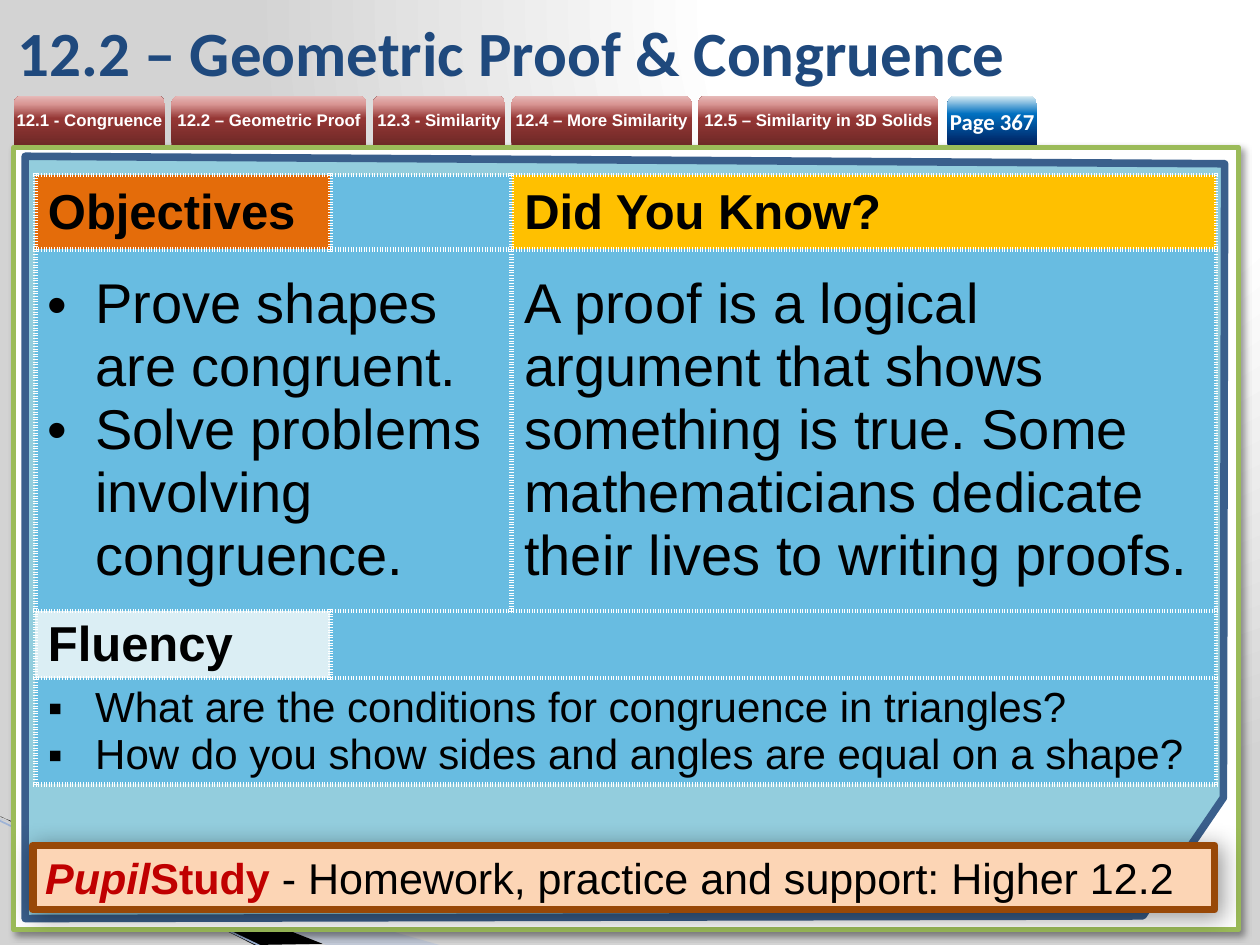
from lxml import etree
from pptx import Presentation
from pptx.dml.color import RGBColor
from pptx.enum import dml, shapes, text
from pptx.oxml.ns import qn
from pptx.util import Pt

THEME = {
    "head": "Calibri", "body": "Arial",
    "navy": "1F497D", "black": "000000", "white": "FFFFFF", "red": "C00000",
    "orange": "E46C0A", "gold": "FFC000", "ice": "DBEEF4", "sky": "68BCE1",
    "teal": "93CDDD", "edge": "3A5F8C", "green": "9BBB59", "peach": "FCD5B5",
    "brown": "984807", "haze": "A7B9DB", "mist": "9EB3D6",
    "title": 36, "big": 32, "label": 28, "small": 24, "foot": 24.6, "tab": 9.6, "page": 13,
    "maroon": [(0, "6F2927"), (54, "953735"), (83, "D99694"), (100, "E6B9B8")],
    "ocean": [(0, "002060"), (63, "0070C0"), (100, "DBEEF4")],
    "glow": [(0, "FFFFFF"), (40, "FFFFFF"), (100, "D3D3D3")],
}
T = THEME

# Content
TITLE = "12.2 – Geometric Proof & Congruence"
TABS = [("12.1 - Congruence", 86.4), ("12.2 – Geometric Proof", 111.6),
        ("12.3 - Similarity", 75.6), ("12.4 – More Similarity", 103),
        ("12.5 – Similarity in 3D Solids", 137.5)]
PAGE = "Page 367"
COLS = [168.5, 103.7, 402.5]
ROWS = [42.5, 206.6, 35.3, 45.4]
LABEL = {"size": T["label"], "bold": True}
# row, column, column span, fill, paragraphs, format
CELLS = [
    (0, 0, 1, "orange", ["Objectives"], LABEL),
    (0, 1, 1, "sky", [], {}),
    (0, 2, 1, "gold", ["Did You Know?"], LABEL),
    (1, 0, 2, "sky", ["Prove shapes are congruent.",
                      "Solve problems involving congruence."],
     {"size": T["big"], "bullet": "•"}),
    (1, 2, 1, "sky", ["A proof is a logical argument that shows something is true. "
                      "Some mathematicians dedicate their lives to writing proofs."],
     {"size": T["big"]}),
    (2, 0, 1, "ice", ["Fluency"], LABEL),
    (2, 1, 2, "sky", [], {}),
    (3, 0, 3, "sky", ["What are the conditions for congruence in triangles?",
                      "How do you show sides and angles are equal on a shape?"],
     {"size": T["small"], "bullet": "▪"}),
]
FOOT = [("Pupil", {"color": "red", "bold": True, "italic": True}),
        ("Study ", {"color": "red", "bold": True}),
        ("- Homework, practice and support: Higher 12.2", {})]


def rgb(name):
    return RGBColor.from_string(T[name])


def sub(node, tag, **attrs):
    return etree.SubElement(node, qn("a:" + tag), {k: str(v) for k, v in attrs.items()})


def write(frame, paras, size=18, font="body", color="black", bold=False, italic=False,
          align="LEFT", bullet=None, lead=None):
    """Each paragraph is a string or a list of (text, format) runs."""
    for i, runs in enumerate(paras):
        para = frame.paragraphs[0] if i == 0 else frame.add_paragraph()
        if bullet:
            props = para._p.get_or_add_pPr()
            props.set("marL", str(Pt(27)))
            props.set("indent", str(Pt(-27)))
            sub(props, "buFont", typeface=T["body"])
            sub(props, "buChar", char=bullet)
        para.alignment = text.PP_ALIGN[align]
        if lead:
            para.line_spacing = Pt(lead)
        for words, own in [(runs, {})] if isinstance(runs, str) else runs:
            run = para.add_run()
            run.text = words
            run.font.name, run.font.size = T[font], Pt(size)
            run.font.bold = own.get("bold", bold)
            run.font.italic = own.get("italic", italic)
            run.font.color.rgb = rgb(own.get("color", color))


def blend(fill, owner, stops, center=None):
    fill.gradient()
    grad = owner.find(".//" + qn("a:gradFill"))
    for child in list(grad):
        grad.remove(child)
    group = sub(grad, "gsLst")
    for pos, color in stops:
        sub(sub(group, "gs", pos=pos * 1000), "srgbClr", val=color)
    if center:
        sub(sub(grad, "path", path="circle"), "fillToRect",
            **{side: v * 1000 for side, v in zip("ltrb", center)})
    else:
        sub(grad, "lin", ang=16200000, scaled=0)


def paint(shape, fill=None, line=None, width=1, shade=None):
    shape.shadow.inherit = False
    if fill:
        shape.fill.solid()
        shape.fill.fore_color.rgb = rgb(fill)
    if line:
        shape.line.color.rgb, shape.line.width = rgb(line), Pt(width)
    else:
        shape.line.fill.background()
    if shade:
        glow = sub(shape.element.spPr.find(qn("a:effectLst")), "outerShdw",
                   blurRad=Pt(shade), dist=Pt(3), dir=45 * 60000, algn="tl", rotWithShape=0)
        sub(sub(glow, "srgbClr", val=T["black"]), "alpha", val=40000)


def box(slide, kind, left, top, width, height):
    return slide.shapes.add_shape(kind, Pt(left), Pt(top), Pt(width), Pt(height))


def outline(slide, points, close=True):
    pts = [(Pt(x), Pt(y)) for x, y in points]
    pen = slide.shapes.build_freeform(*pts[0])
    pen.add_line_segments(pts[1:], close=close)
    return pen.convert_to_shape()


def tab(slide, words, left, width, stops, **fmt):
    shape = box(slide, shapes.MSO_SHAPE.ROUND_2_SAME_RECTANGLE, left, 54.7, width, 28.1)
    paint(shape)
    blend(shape.fill, shape.element, stops)
    frame = shape.text_frame
    frame.margin_left = frame.margin_right = frame.margin_top = frame.margin_bottom = 0
    frame.vertical_anchor = text.MSO_ANCHOR.MIDDLE
    frame.word_wrap = False
    write(frame, [words], color="white", bold=True, align="CENTER", **fmt)


def border(cell):
    props = cell._tc.get_or_add_tcPr()
    for i, side in enumerate(("lnL", "lnR", "lnT", "lnB")):
        line = etree.Element(qn("a:" + side), {"w": str(Pt(3))})
        sub(sub(line, "solidFill"), "srgbClr", val=T["white"])
        sub(line, "prstDash", val="sysDot")
        props.insert(i, line)


def grid(slide):
    table = slide.shapes.add_table(len(ROWS), len(COLS), Pt(20.2), Pt(100),
                                   Pt(sum(COLS)), Pt(sum(ROWS))).table
    table.first_row = table.horz_banding = False
    for col, width in zip(table.columns, COLS):
        col.width = Pt(width)
    for row, height in zip(table.rows, ROWS):
        row.height = Pt(height)
    for r, c, span, fill, paras, fmt in CELLS:
        cell = table.cell(r, c)
        if span > 1:
            cell.merge(table.cell(r, c + span - 1))
        cell.vertical_anchor = text.MSO_ANCHOR.MIDDLE
        write(cell.text_frame, paras, **fmt)
        for part in range(c, c + span):
            table.cell(r, part).fill.solid()
            table.cell(r, part).fill.fore_color.rgb = rgb(fill)
            border(table.cell(r, part))


def main():
    deck = Presentation()
    deck.slide_width, deck.slide_height = Pt(720), Pt(540)
    slide = deck.slides.add_slide(deck.slide_layouts[5])
    blend(slide.background.fill, slide.element, T["glow"], (65, 0, 0, 98))

    # Corner streaks
    streak = outline(slide, [(-0.7, 468), (251.3, 540), (186.5, 540), (-0.7, 467.3)])
    paint(streak, "haze")
    sub(streak.element.spPr.find(".//" + qn("a:srgbClr")), "alpha", val=40000)
    paint(outline(slide, [(0, 466.6), (184.3, 539.3), (145.4, 540), (0.7, 466.6)]), "black")
    ray = slide.shapes.add_connector(shapes.MSO_CONNECTOR.STRAIGHT,
                                     Pt(-0.7), Pt(468.7), Pt(150.5), Pt(541.4))
    ray.line.color.rgb, ray.line.width = rgb("mist"), Pt(0.95)
    sub(ray.element.spPr, "effectLst")

    # Frame and panel
    paint(box(slide, shapes.MSO_SHAPE.RECTANGLE, 7.9, 84.2, 699.8, 447.1),
          "white", "green", 3, shade=4)
    paint(outline(slide, [(14.4, 89.3), (699.8, 93.6), (699.1, 455.8), (653, 523.4),
                          (14.4, 524.9)]), "teal", "edge", 4.33)

    # Title
    title = slide.shapes.title
    title.left, title.top, title.width, title.height = Pt(2.9), Pt(3.6), Pt(595.4), Pt(51.1)
    title.text_frame.vertical_anchor = text.MSO_ANCHOR.MIDDLE
    title.text_frame.auto_size = text.MSO_AUTO_SIZE.NONE
    write(title.text_frame, [TITLE], size=T["title"], font="head", color="navy", bold=True)

    # Tabs
    left = 7.9
    for words, width in TABS:
        tab(slide, words, left, width, T["maroon"], size=T["tab"], lead=10)
        left += width + 3.6
    tab(slide, PAGE, 541.4, 51.1, T["ocean"], size=T["page"], font="head")

    grid(slide)

    # Footer
    foot = box(slide, shapes.MSO_SHAPE.RECTANGLE, 18.7, 483.1, 675.4, 36.7)
    paint(foot, "peach", "brown", 4.33, shade=13)
    foot.text_frame.vertical_anchor = text.MSO_ANCHOR.MIDDLE
    foot.text_frame.word_wrap = True
    foot.text_frame.auto_size = text.MSO_AUTO_SIZE.SHAPE_TO_FIT_TEXT
    write(foot.text_frame, [FOOT], size=T["foot"])

    deck.save("out.pptx")


if __name__ == "__main__":
    main()
